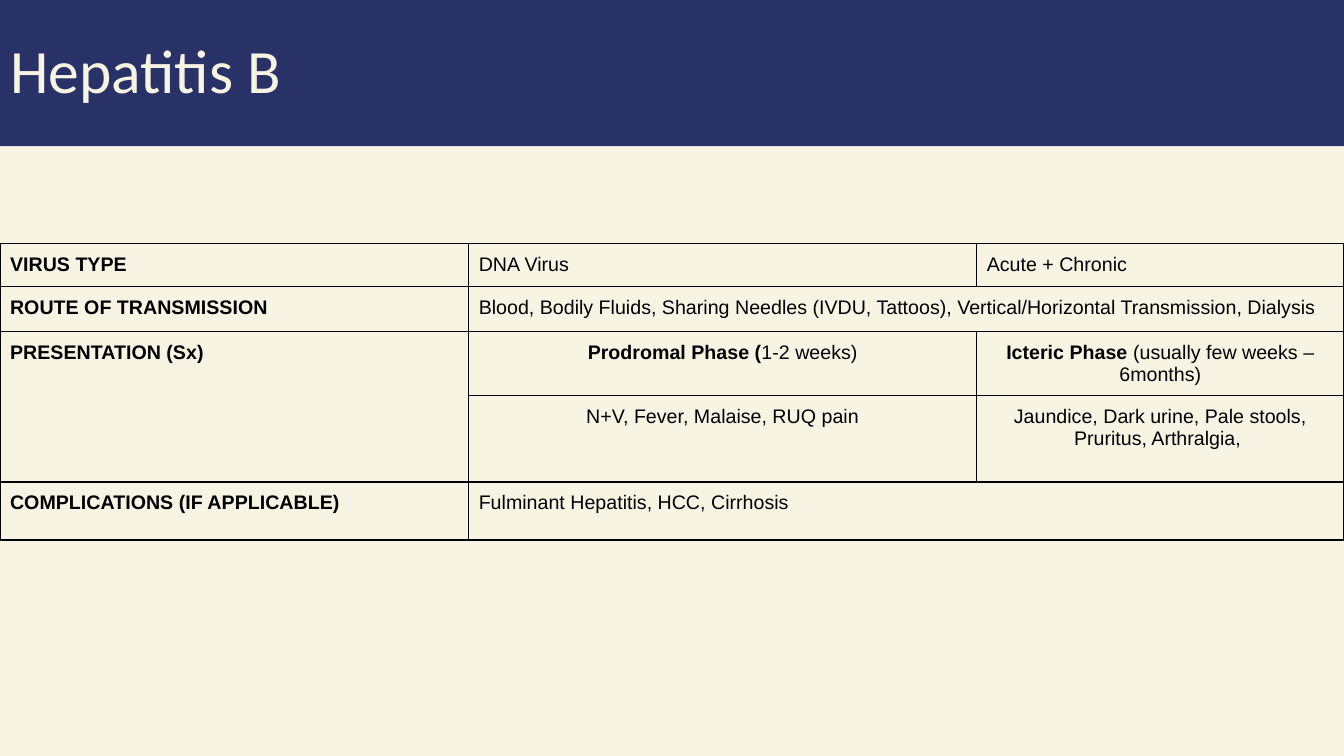
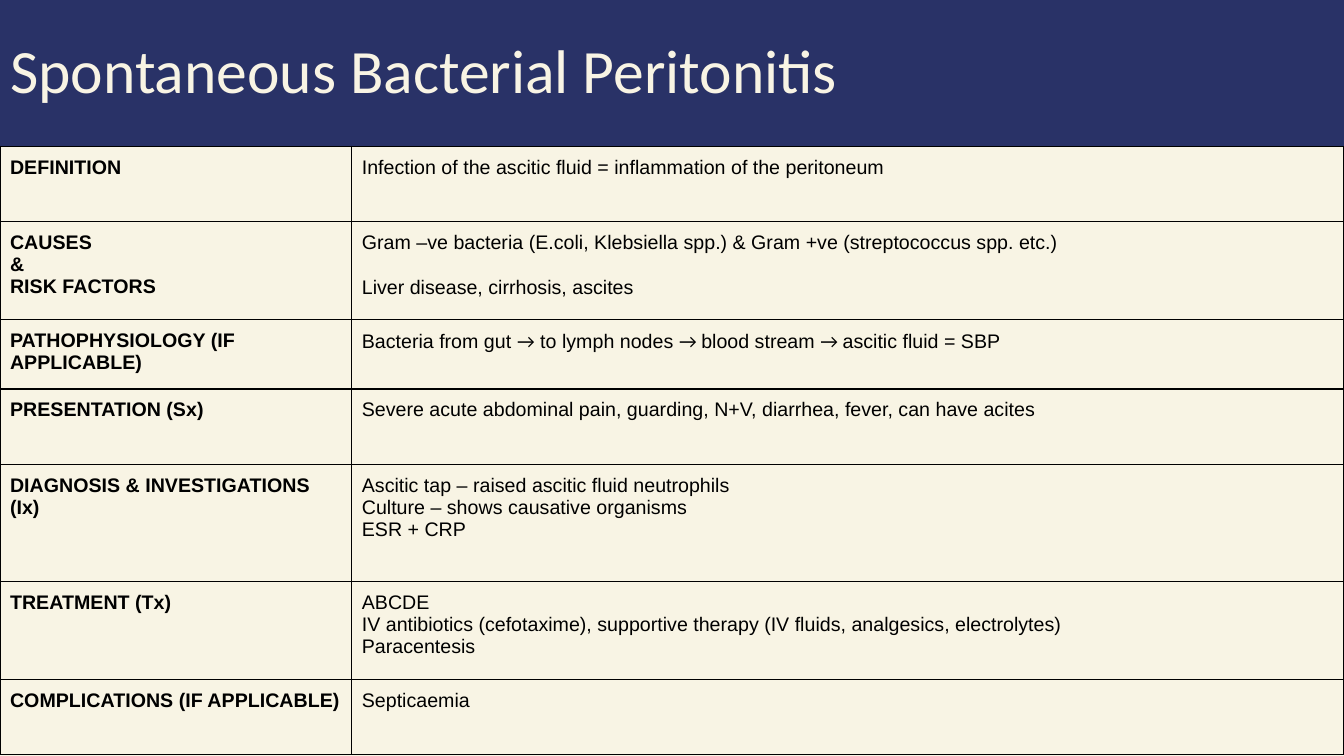
from dataclasses import dataclass

from lxml.etree import SubElement
from pptx import Presentation
from pptx.dml.color import RGBColor
from pptx.enum.text import MSO_ANCHOR, MSO_AUTO_SIZE, PP_ALIGN
from pptx.oxml import parse_xml
from pptx.oxml.ns import nsdecls, qn
from pptx.util import Inches, Pt


@dataclass(frozen=True)
class Theme:
    paper: str = "F8F4E4"
    band: str = "293267"
    ink: str = "000000"
    title_font: str = "Calibri"
    body_font: str = "Arial"
    title_size: int = 44
    body_size: int = 14
    blank_line: int = 16
    rule_width: int = 1
    inset: float = 0.1
    title_rows: int = 29


@dataclass(frozen=True)
class Span:
    text: str
    bold: bool = False
    font: str = ""


@dataclass(frozen=True)
class Cell:
    paragraphs: tuple
    across: int = 1
    down: int = 1
    bold: bool = False
    align: PP_ALIGN = PP_ALIGN.LEFT
    gap: int = 0


THEME = Theme()
GRID_COLUMNS = 266.67
GRID_ROWS = 150


def write_text(frame, paragraphs, *, font, size, color, bold=False,
               align=PP_ALIGN.LEFT, line_spacing=None, gap=0):
    for index, spans in enumerate(paragraphs):
        para = frame.add_paragraph() if index else frame.paragraphs[0]
        para.alignment = align
        if line_spacing:
            para.line_spacing = line_spacing
        if index and gap:
            para.space_before = Pt(gap)
        for span in (Span(spans),) if isinstance(spans, str) else spans:
            run = para.add_run()
            run.text = span.text
            run.font.name = span.font or font
            run.font.size = Pt(size)
            run.font.bold = bold or span.bold
            run.font.color.rgb = RGBColor.from_string(color)


def label(*lines, down=1):
    return Cell(lines, bold=True, down=down)


def fact(*lines, across=1, gap=0):
    return Cell(lines, across=across, gap=gap)


def centred(*spans):
    return Cell((spans,), align=PP_ALIGN.CENTER)


def arrow(text):
    return Span(text, font=THEME.title_font)


class SlideBuilder:
    def __init__(self, deck, theme):
        self.deck = deck
        self.theme = theme
        self.page = None
        fill = deck.slide_master.background.fill
        fill.solid()
        fill.fore_color.rgb = RGBColor.from_string(theme.paper)

    def across(self, columns):
        return round(self.deck.slide_width * columns / GRID_COLUMNS)

    def down(self, rows):
        return round(self.deck.slide_height * rows / GRID_ROWS)

    def add_page(self, title):
        self.page = self.deck.slides.add_slide(self.deck.slide_layouts[5])
        box = self.page.shapes.title
        box.left, box.top = 0, 0
        box.width = self.deck.slide_width
        box.height = self.down(self.theme.title_rows)
        box.fill.solid()
        box.fill.fore_color.rgb = RGBColor.from_string(self.theme.band)
        frame = box.text_frame
        frame.word_wrap = True
        frame.auto_size = MSO_AUTO_SIZE.NONE
        frame.vertical_anchor = MSO_ANCHOR.MIDDLE
        write_text(frame, (title,), font=self.theme.title_font,
                   size=self.theme.title_size, color=self.theme.paper,
                   line_spacing=0.9)

    def add_table(self, top, columns, rows, content):
        widths = (*columns, GRID_COLUMNS - sum(columns))
        table = self.page.shapes.add_table(
            len(rows), len(widths), 0, self.down(top),
            self.deck.slide_width, self.down(sum(rows))).table
        table.first_row = False
        table.horz_banding = False
        for column, width in zip(table.columns, widths):
            column.width = self.across(width)
        for row, height in zip(table.rows, rows):
            row.height = self.down(height)
        for row_index, entries in enumerate(content):
            for column_index, entry in enumerate(entries):
                cell = table.cell(row_index, column_index)
                self.frame_cell(cell)
                if entry:
                    self.fill_cell(table, cell, entry, row_index, column_index)

    def fill_cell(self, table, cell, entry, row, column):
        if entry.across > 1 or entry.down > 1:
            cell.merge(table.cell(row + entry.down - 1,
                                  column + entry.across - 1))
        write_text(cell.text_frame, entry.paragraphs,
                   font=self.theme.body_font, size=self.theme.body_size,
                   color=self.theme.ink, bold=entry.bold,
                   align=entry.align, gap=entry.gap)

    def frame_cell(self, cell):
        inset = Inches(self.theme.inset)
        cell.margin_left = cell.margin_right = inset
        cell.margin_top = cell.margin_bottom = inset
        cell.vertical_anchor = MSO_ANCHOR.TOP
        cell.fill.background()
        properties = cell._tc.get_or_add_tcPr()
        for index, side in enumerate(("lnL", "lnR", "lnT", "lnB")):
            border = parse_xml(f'<a:{side} {nsdecls("a")}/>')
            border.set("w", str(Pt(self.theme.rule_width)))
            fill = SubElement(border, qn("a:solidFill"))
            SubElement(fill, qn("a:srgbClr")).set("val", self.theme.ink)
            properties.insert(index, border)


def add_hepatitis(slides):
    slides.add_page("Hepatitis B")
    slides.add_table(48.3, (93, 100.8), (8.5, 9, 12.7, 17.1, 11.5), (
        (label("VIRUS TYPE"), fact("DNA Virus"), fact("Acute + Chronic")),
        (label("ROUTE OF TRANSMISSION"),
         fact("Blood, Bodily Fluids, Sharing Needles (IVDU, Tattoos), "
              "Vertical/Horizontal Transmission, Dialysis", across=2), None),
        (label("PRESENTATION (Sx)", down=2),
         centred(Span("Prodromal Phase (", bold=True), Span("1-2 weeks)")),
         centred(Span("Icteric Phase ", bold=True),
                 Span("(usually few weeks – 6months)"))),
        (None, centred(Span("N+V, Fever, Malaise, RUQ pain")),
         centred(Span("Jaundice, Dark urine, Pale stools, "
                      "Pruritus, Arthralgia, "))),
        (label("COMPLICATIONS (IF APPLICABLE)"),
         fact("Fulminant Hepatitis, HCC, Cirrhosis", across=2), None),
    ))


def add_peritonitis(slides):
    slides.add_page("Spontaneous Bacterial Peritonitis")
    heights = (15, 19.4, 13.8, 15, 23.2, 19.4, 15)
    slides.add_table(THEME.title_rows, (69.8,), heights, (
        (label("DEFINITION"),
         fact("Infection of the ascitic fluid = "
              "inflammation of the peritoneum")),
        (label("CAUSES", "&", "RISK FACTORS"),
         fact("Gram –ve bacteria (E.coli, Klebsiella spp.) & "
              "Gram +ve (streptococcus spp. etc.)",
              "Liver disease, cirrhosis, ascites", gap=THEME.blank_line)),
        (label("PATHOPHYSIOLOGY (IF APPLICABLE)"),
         fact((Span("Bacteria from gut "), arrow("→"),
               Span(" to lymph nodes "), arrow("→ "),
               Span("blood stream "), arrow("→ "),
               Span("ascitic fluid = SBP")))),
        (label("PRESENTATION (Sx)"),
         fact("Severe acute abdominal pain, guarding, N+V, diarrhea, "
              "fever, can have acites")),
        (label("DIAGNOSIS & INVESTIGATIONS (Ix)"),
         fact("Ascitic tap – raised ascitic fluid neutrophils",
              "Culture – shows causative organisms", "ESR + CRP")),
        (label("TREATMENT (Tx)"),
         fact("ABCDE",
              "IV antibiotics (cefotaxime), supportive therapy "
              "(IV fluids, analgesics, electrolytes)",
              "Paracentesis")),
        (label("COMPLICATIONS (IF APPLICABLE)"), fact("Septicaemia")),
    ))


def main():
    deck = Presentation()
    deck.slide_width = Inches(13.33)
    deck.slide_height = Inches(7.5)
    slides = SlideBuilder(deck, THEME)
    add_hepatitis(slides)
    add_peritonitis(slides)
    deck.save("out.pptx")


if __name__ == "__main__":
    main()
